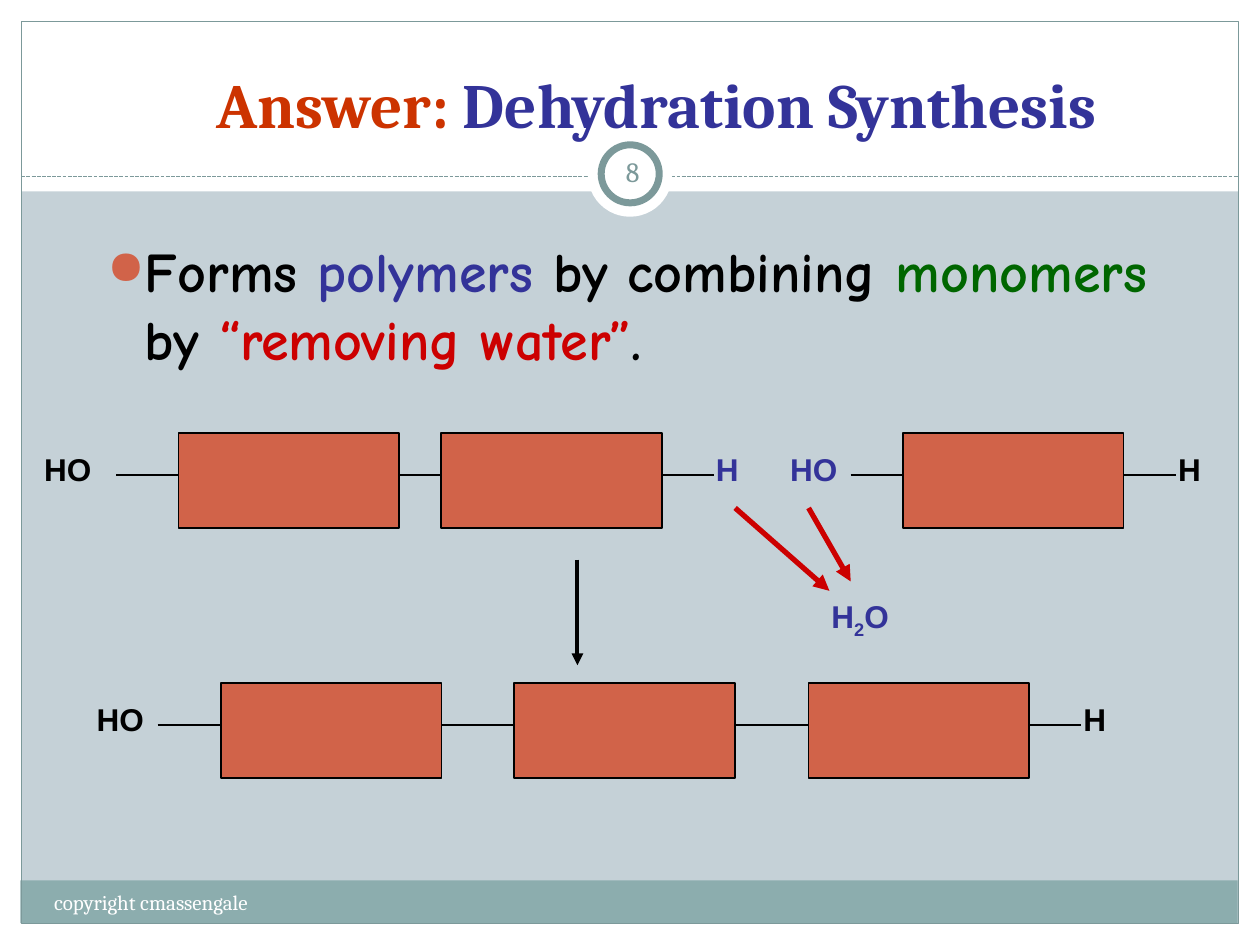
from dataclasses import dataclass
from typing import Optional

from lxml import etree
from pptx import Presentation
from pptx.dml.color import RGBColor
from pptx.enum import dml, shapes, text
from pptx.oxml.ns import qn
from pptx.util import Cm, Pt


@dataclass(frozen=True)
class Theme:
    background: str = "C5D1D7"
    paper: str = "FFFFFF"
    band: str = "8CADAE"
    frame: str = "7C999A"
    monomer: str = "D16349"
    ink: str = "000000"
    blue: str = "333399"
    green: str = "006600"
    red: str = "CC0000"
    orange: str = "CC3300"
    serif: str = "Cambria"
    hand: str = "Comic Neue"
    sans: str = "Arial"
    title_size: int = 36
    body_size: int = 32
    label_size: int = 18
    number_size: int = 16
    footer_size: int = 12


THEME = Theme()


@dataclass(frozen=True)
class Area:
    left: float
    top: float
    width: float
    height: float

    def lengths(self) -> tuple:
        return tuple(Cm(n) for n in (self.left, self.top, self.width, self.height))


@dataclass(frozen=True)
class Span:
    wording: str
    color: str
    baseline: int = 0


@dataclass(frozen=True)
class Stroke:
    color: str
    points: float
    dash: Optional[dml.MSO_LINE] = None
    arrow: bool = False


@dataclass(frozen=True)
class Label:
    left: float
    spans: tuple
    width: float = 1.78


@dataclass(frozen=True)
class Chain:
    """A row of monomers, the bonds beside them and the end groups."""
    top: float
    monomers: tuple
    bonds: tuple
    labels: tuple


MONOMER_WIDTH, MONOMER_HEIGHT = 4.45, 1.91
BOND_DROP = 0.85
LABEL_RISE, LABEL_HEIGHT = 0.63, 1.27
H_WIDTH = 1.12
BOND = Stroke(THEME.ink, 1)
RELEASE = Stroke(THEME.red, 3, arrow=True)


def hydrogen(left: float, color: str = THEME.ink) -> Label:
    return Label(left, (Span("H", color),), H_WIDTH)


def hydroxyl(left: float, color: str = THEME.ink) -> Label:
    return Label(left, (Span("HO", color),))


REACTANTS = Chain(
    8.73, (3.6, 8.89, 18.2),
    ((2.34, 3.6), (8.05, 8.89), (13.34, 14.4), (17.15, 18.2), (22.65, 23.7)),
    (hydroxyl(0.64), hydrogen(14.18, THEME.blue),
     hydroxyl(15.68, THEME.blue), hydrogen(23.5)))
PRODUCT = Chain(
    13.77, (4.45, 10.37, 16.3),
    ((3.18, 4.45), (8.89, 10.37), (14.82, 16.3), (20.75, 21.8)),
    (hydroxyl(1.7), hydrogen(21.59)))


def apply_format(target, values: dict) -> None:
    for name, value in values.items():
        setattr(target, name, value)


def apply_stroke(line, stroke: Stroke) -> None:
    line.color.rgb = RGBColor.from_string(stroke.color)
    line.width = Pt(stroke.points)
    if stroke.dash is not None:
        line.dash_style = stroke.dash


def add_figure(page, area: Area, fill: Optional[str] = None,
               stroke: Optional[Stroke] = None,
               kind=shapes.MSO_SHAPE.RECTANGLE) -> None:
    figure = page.shapes.add_shape(kind, *area.lengths())
    figure.shadow.inherit = False
    if fill:
        figure.fill.solid()
        figure.fill.fore_color.rgb = RGBColor.from_string(fill)
    else:
        figure.fill.background()
    if stroke:
        apply_stroke(figure.line, stroke)
    else:
        figure.line.fill.background()


def add_line(page, start: tuple, end: tuple, stroke: Stroke) -> None:
    line = page.shapes.add_connector(
        shapes.MSO_CONNECTOR.STRAIGHT, *(Cm(n) for n in start + end))
    apply_stroke(line.line, stroke)
    if stroke.arrow:
        etree.SubElement(line.line._get_or_add_ln(), qn("a:tailEnd"), type="triangle")
    etree.SubElement(line._element.spPr, qn("a:effectLst"))


def add_text(page, area: Area, spans: tuple, font: dict,
             frame: Optional[dict] = None, align=text.PP_ALIGN.LEFT):
    """Add a one-paragraph text box and return the paragraph."""
    box = page.shapes.add_textbox(*area.lengths())
    apply_format(box.text_frame, {"word_wrap": True, **(frame or {})})
    para = box.text_frame.paragraphs[0]
    para.alignment = align
    for span in spans:
        run = para.add_run()
        run.text = span.wording
        apply_format(run.font, font)
        run.font.color.rgb = RGBColor.from_string(span.color)
        if span.baseline:
            run._r.get_or_add_rPr().set("baseline", str(span.baseline * 1000))
    return para


def add_bullet(para) -> None:
    props = para._p.get_or_add_pPr()
    props.set("marL", str(Cm(0.76)))
    props.set("indent", str(Cm(-0.76)))
    color = etree.SubElement(props, qn("a:buClr"))
    etree.SubElement(color, qn("a:srgbClr"), val=THEME.monomer)
    etree.SubElement(props, qn("a:buSzPct"), val="85000")
    etree.SubElement(props, qn("a:buChar"), char="●")


def add_label(page, label: Label, top: float) -> None:
    add_text(page, Area(label.left, top, label.width, LABEL_HEIGHT), label.spans,
             {"name": THEME.sans, "size": Pt(THEME.label_size), "bold": True},
             {"word_wrap": False, "auto_size": text.MSO_AUTO_SIZE.SHAPE_TO_FIT_TEXT})


def add_chain(page, chain: Chain) -> None:
    bond_y = chain.top + BOND_DROP
    for left in chain.monomers:
        add_figure(page, Area(left, chain.top, MONOMER_WIDTH, MONOMER_HEIGHT),
                   THEME.monomer, BOND)
    for start, end in chain.bonds:
        add_line(page, (start, bond_y), (end, bond_y), BOND)
    for label in chain.labels:
        add_label(page, label, bond_y - LABEL_RISE)


def add_backdrop(page) -> None:
    page.background.fill.solid()
    page.background.fill.fore_color.rgb = RGBColor.from_string(THEME.background)
    for margin in (Area(0, 18.62, 25.4, 0.43), Area(0, 0, 25.4, 3.86),
                   Area(0, 0, 0.43, 19.05), Area(24.97, 0, 0.43, 19.05)):
        add_figure(page, margin, THEME.paper)
    add_figure(page, Area(0.41, 17.75, 24.54, 0.86), THEME.band)
    add_figure(page, Area(0.43, 0.43, 24.54, 18.19), stroke=Stroke(THEME.frame, 0.75))
    add_line(page, (0.43, 3.56), (24.97, 3.56),
             Stroke(THEME.frame, 0.75, dml.MSO_LINE.SQUARE_DOT))
    oval = shapes.MSO_SHAPE.OVAL
    add_figure(page, Area(11.85, 2.67, 1.7, 1.7), THEME.paper, kind=oval)
    add_figure(page, Area(12.12, 2.92, 1.17, 1.17), THEME.paper,
               Stroke(THEME.frame, 4), oval)


def add_wording(page) -> None:
    center = text.PP_ALIGN.CENTER
    add_text(page, Area(1.7, 1.27, 23.06, 1.7),
             (Span("Answer:", THEME.orange), Span(" Dehydration Synthesis", THEME.blue)),
             {"name": THEME.serif, "size": Pt(THEME.title_size), "bold": True},
             {"vertical_anchor": text.MSO_ANCHOR.BOTTOM}, center)
    add_text(page, Area(0.84, 17.81, 9.96, 1.02),
             (Span("copyright cmassengale", THEME.paper),),
             {"name": THEME.serif, "size": Pt(THEME.footer_size)})
    margins = {f"margin_{side}": Cm(0.13) for side in ("left", "right", "top", "bottom")}
    add_text(page, Area(12.12, 2.84, 1.27, 1.22), (Span("8", THEME.frame),),
             {"name": THEME.serif, "size": Pt(THEME.number_size)},
             {"vertical_anchor": text.MSO_ANCHOR.MIDDLE, **margins}, center)
    para = add_text(
        page, Area(1.91, 4.65, 21.59, 11.43),
        (Span("Forms ", THEME.ink), Span("polymers", THEME.blue),
         Span(" by combining ", THEME.ink), Span("monomers", THEME.green),
         Span(" by ", THEME.ink), Span("“removing water”", THEME.red),
         Span(".", THEME.ink)),
        {"name": THEME.hand, "size": Pt(THEME.body_size), "bold": True})
    para.space_before = Pt(THEME.body_size * 0.2)
    add_bullet(para)


def main() -> None:
    deck = Presentation()
    apply_format(deck, {"slide_width": Cm(25.4), "slide_height": Cm(19.05)})
    page = deck.slides.add_slide(deck.slide_layouts[6])
    add_backdrop(page)
    add_wording(page)
    for chain in (PRODUCT, REACTANTS):
        add_chain(page, chain)
    add_line(page, (11.64, 11.28), (11.64, 13.41), Stroke(THEME.ink, 2.25, arrow=True))
    water = (Span("H", THEME.blue), Span("2", THEME.blue, -25), Span("O", THEME.blue))
    add_label(page, Label(16.51, water, 2.08), 11.91)
    add_line(page, (14.82, 10.24), (16.72, 11.91), RELEASE)
    add_line(page, (16.3, 10.24), (17.15, 11.72), RELEASE)
    deck.save("out.pptx")


if __name__ == "__main__":
    main()
